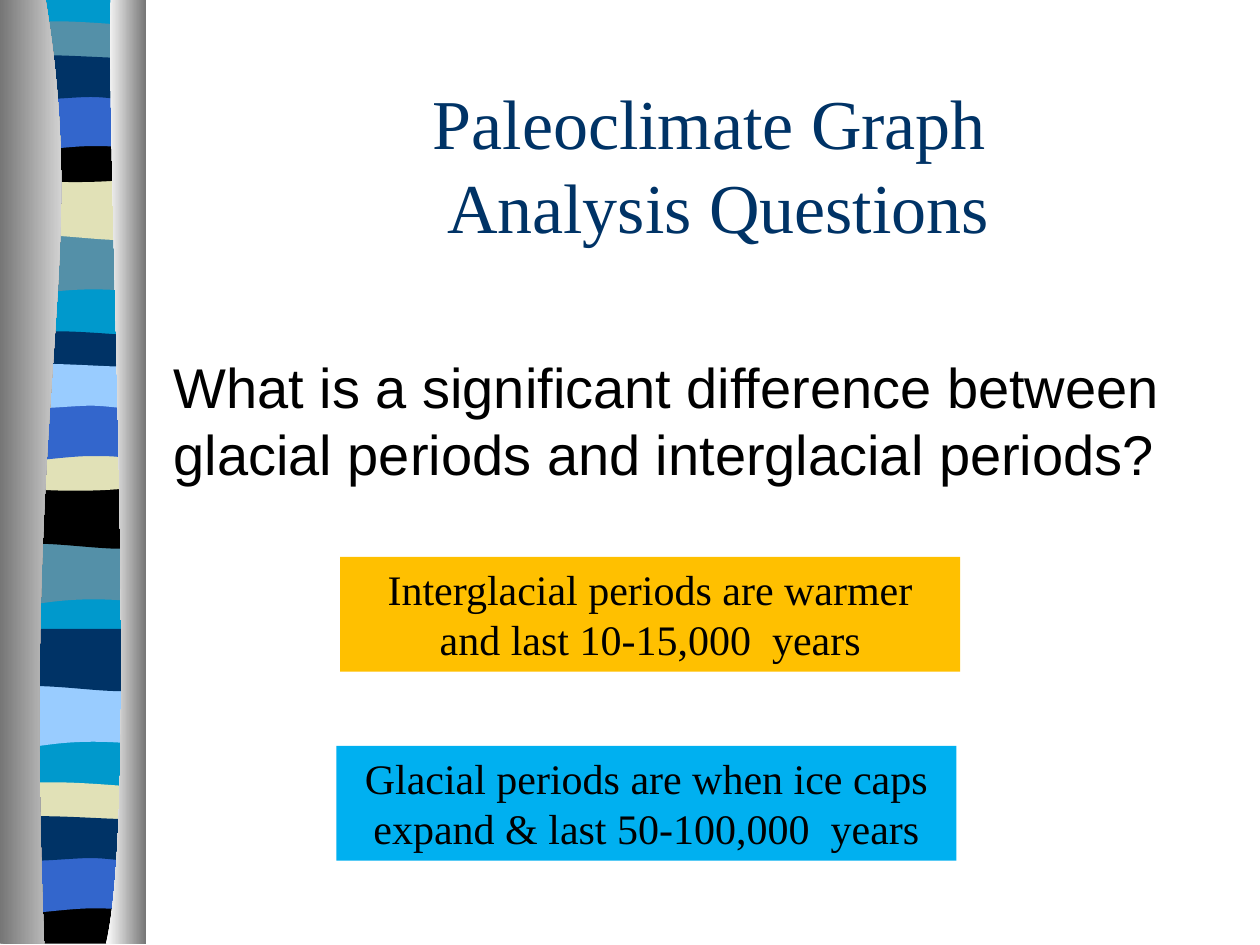
from lxml import etree
from pptx import Presentation
from pptx.dml.color import RGBColor
from pptx.enum.shapes import MSO_SHAPE
from pptx.enum.text import MSO_ANCHOR, MSO_AUTO_SIZE, PP_ALIGN
from pptx.oxml.ns import qn
from pptx.util import Inches, Pt

LEFT, RIGHT = 0.05, 1.14


def rgb(code):
    return RGBColor.from_string(code)


def add_outline(segments, top=0):
    """Draw a closed outline; 2 numbers are a straight line, 6 a Bezier curve."""
    points = [(Inches(segment[i]), Inches(segment[i + 1] + top))
              for segment in segments for i in range(0, len(segment), 2)]
    builder = slide.shapes.build_freeform(*points[0])
    builder.add_line_segments(points[1:], close=True)
    outline = builder.convert_to_shape()
    outline.shadow.inherit = False
    outline.line.fill.background()

    # Gather the three points of each curve into one Bezier segment
    lines = iter(outline._element.findall(".//" + qn("a:lnTo")))
    for segment in segments[1:]:
        line = next(lines)
        if len(segment) == 6:
            curve = etree.Element(qn("a:cubicBezTo"))
            line.addprevious(curve)
            for part in (line, next(lines), next(lines)):
                curve.append(part[0])
                part.getparent().remove(part)
    return outline


prs = Presentation()
prs.slide_width, prs.slide_height = Inches(10), Inches(7.5)
slide = prs.slides.add_slide(prs.slide_layouts[5])

# Outlines of the strata, measured from the top of each band
band_outlines = {
    "full": [(RIGHT, 0), (RIGHT, 7.47), (LEFT, 7.47), (LEFT, 0)],
    "swell": [(RIGHT, 0), (RIGHT, 0.47), (0.39, 0.39, 0.24, 0.55, LEFT, 0.47), (LEFT, 0)],
    "ripple": [(RIGHT, 0), (RIGHT, 0.47), (0.96, 0.55, 0.39, 0.41, LEFT, 0.47), (LEFT, 0)],
    "crest": [(RIGHT, 0), (RIGHT, 0.24), (0.96, 0.29, 0.24, 0.29, LEFT, 0.24), (LEFT, 0),
              (0.12, -0.05, 0.29, -0.04, 0.47, -0.04), (0.65, -0.04, 1, -0.01, RIGHT, 0)],
    "bowl": [(RIGHT, 0), (RIGHT, 0.32), (0.96, 0.38, 0.24, 0.38, LEFT, 0.32), (LEFT, 0),
             (0.72, 0.05, 0.91, 0, RIGHT, 0)],
    "arch": [(RIGHT, 0), (RIGHT, 0.47), (0.97, 0.42, 0.9, 0.42, 0.72, 0.42),
             (0.54, 0.42, 0.22, 0.47, LEFT, 0.47), (LEFT, 0)],
    "wave": [(RIGHT, 0), (RIGHT, 0.31), (1.07, 0.36, 0.9, 0.31, 0.72, 0.31),
             (0.54, 0.31, 0.17, 0.36, LEFT, 0.31), (LEFT, 0),
             (0.21, -0.05, 0.79, 0, 0.97, 0), (1.15, 0, 1.1, 0, RIGHT, 0)],
    "base": [(RIGHT, 0), (RIGHT, 0.37), (LEFT, 0.37), (LEFT, 0),
             (0.72, 0.05, 0.91, 0, RIGHT, 0)],
}
bands = [
    ("full", 0, "0099CC"),
    ("swell", 1.85, "5490A8"), ("ripple", 1.41, "E1E1B7"), ("crest", 0.21, "5490A8"),
    ("bowl", 1.08, "000000"), ("arch", 0.74, "3366CC"), ("wave", 0.46, "003366"),
    ("swell", 4.31, "5490A8"), ("ripple", 3.86, "000000"), ("crest", 2.67, "003366"),
    ("bowl", 3.53, "E1E1B7"), ("arch", 3.2, "3366CC"), ("wave", 2.91, "99CCFF"),
    ("swell", 5.44, "99CCFF"), ("ripple", 4.99, "003366"), ("crest", 6.25, "E1E1B7"),
    ("base", 7.12, "000000"), ("arch", 6.79, "3366CC"), ("wave", 6.5, "003366"),
]
for outline_name, top, color in bands:
    band = add_outline(band_outlines[outline_name], top)
    band.fill.solid()
    band.fill.fore_color.rgb = rgb(color)

# Grey edges that frame the strata
edges = [
    ([(0.36, -0.01), (0.72, 2.16, 0.17, 2.96, 0.35, 7.49), (0, 7.49), (0, -0.01)],
     ("767676", "FFFFFF")),
    ([(0.88, -0.01), (0.84, 1.25, 1.11, 6.46, 0.84, 7.49), (1.16, 7.49), (1.16, 0)],
     ("FFFFFF", "767676")),
]
for segments, colors in edges:
    edge = add_outline(segments)
    edge.fill.gradient()
    edge.fill.gradient_angle = 0
    for stop, color, position in zip(edge.fill.gradient_stops, colors, (0, 1)):
        stop.color.rgb = rgb(color)
        stop.position = position

question = slide.shapes.add_textbox(Inches(1.28), Inches(2.75), Inches(8.5), Inches(1.42))
question.text_frame.word_wrap = True
question.text_frame.text = ("What is a significant difference between glacial periods "
                            "and interglacial periods?")
question_font = question.text_frame.paragraphs[0].font
question_font.name, question_font.size = "Arial", Pt(32)
question_font.color.rgb = rgb("000000")

title = slide.shapes.title
title.left, title.top, title.width, title.height = (
    Inches(1.45), Inches(0.67), Inches(8.5), Inches(1.25))
title.text_frame.text = "Paleoclimate Graph \nAnalysis Questions"
title.text_frame.vertical_anchor = MSO_ANCHOR.MIDDLE
title.text_frame.auto_size = MSO_AUTO_SIZE.NONE
for paragraph in title.text_frame.paragraphs:
    paragraph.alignment = PP_ALIGN.CENTER
    paragraph.font.name, paragraph.font.size = "Times New Roman", Pt(40)
    paragraph.font.color.rgb = rgb("003366")

answers = [
    (2.7, 4.42, "FFC000", "Interglacial periods are warmer and last 10-15,000  years"),
    (2.67, 5.92, "00B0F0", "Glacial periods are when ice caps expand & last 50-100,000  years"),
]
for left, top, color, text in answers:
    answer = slide.shapes.add_shape(
        MSO_SHAPE.RECTANGLE, Inches(left), Inches(top), Inches(4.92), Inches(0.91))
    answer.shadow.inherit = False
    answer.fill.solid()
    answer.fill.fore_color.rgb = rgb(color)
    answer.line.fill.background()
    frame = answer.text_frame
    frame.word_wrap = True
    frame.auto_size = MSO_AUTO_SIZE.SHAPE_TO_FIT_TEXT
    frame.vertical_anchor = MSO_ANCHOR.TOP
    frame.text = text
    paragraph = frame.paragraphs[0]
    paragraph.alignment = PP_ALIGN.CENTER
    paragraph.font.name, paragraph.font.size = "Times New Roman", Pt(24)
    paragraph.font.color.rgb = rgb("000000")

prs.save("out.pptx")
